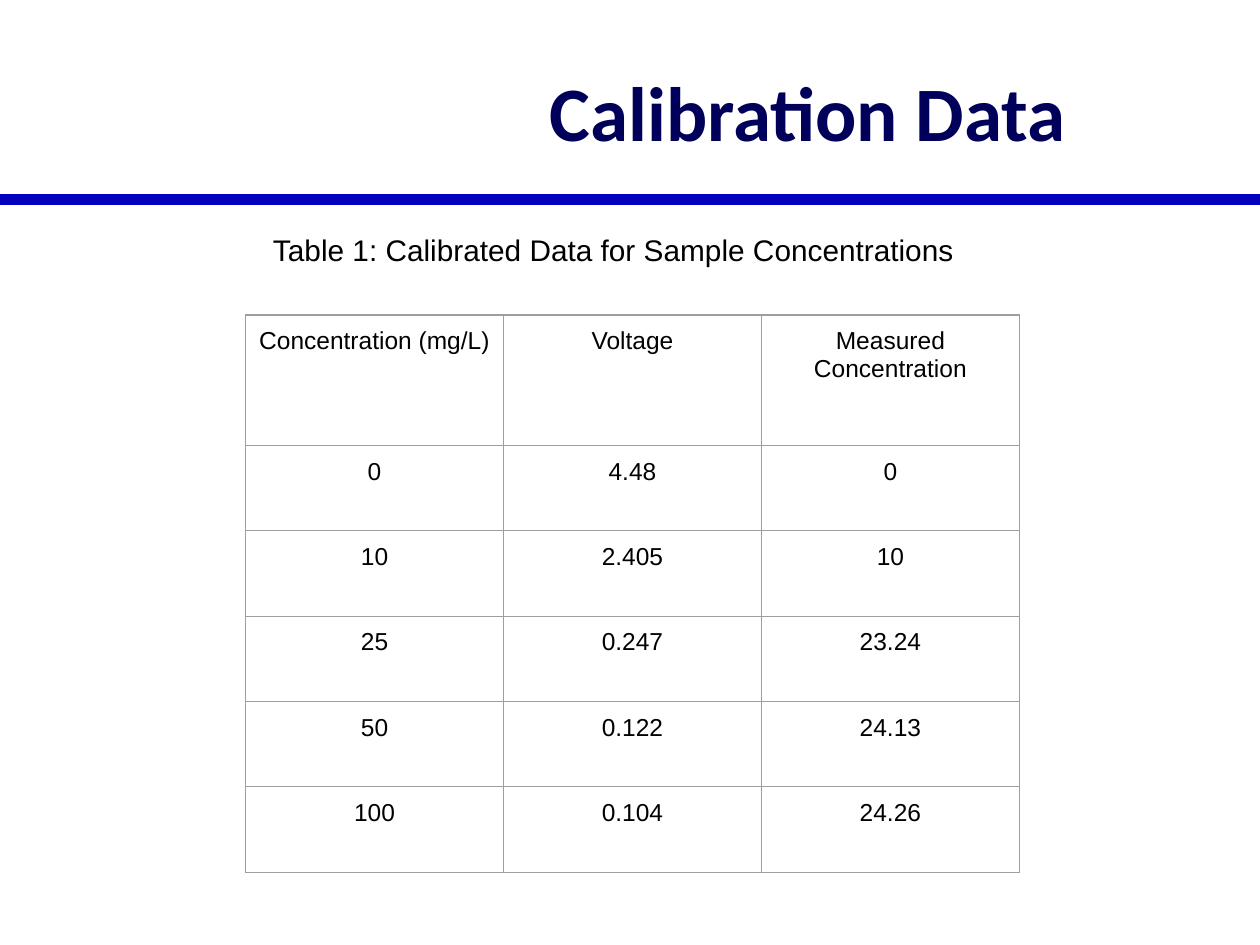
import pptx
import pptx.dml.color
import pptx.enum.shapes
import pptx.enum.text
import pptx.oxml
import pptx.oxml.ns
import pptx.util
from lxml import etree

Cm = pptx.util.Cm
Pt = pptx.util.Pt
Anchor = pptx.enum.text.MSO_ANCHOR

# Content
TITLE = "Calibration Data"
CAPTION = "Table 1: Calibrated Data for Sample Concentrations"
ROWS = [
    ("Concentration (mg/L)", "Voltage", "Measured Concentration"),
    ("0", "4.48", "0"),
    ("10", "2.405", "10"),
    ("25", "0.247", "23.24"),
    ("50", "0.122", "24.13"),
    ("100", "0.104", "24.26"),
]
COLORS = {"title": "00005A", "rule": "0300BE", "text": "000000", "border": "9E9E9E"}

# Layout in centimetres
SLIDE_WIDTH, SLIDE_HEIGHT = 25.4, 19.05
RULE_TOP = 4.02
TABLE_LEFT, TABLE_TOP = 4.95, 6.35
COLUMN_WIDTH = 5.2
HEADER_HEIGHT, ROW_HEIGHT = 2.63, 1.72
INSET = 0.25


def color(name):
    return pptx.dml.color.RGBColor.from_string(COLORS[name])


def write_text(text_frame, text, size, font="Arial", color_name="text", bold=False):
    text_frame.word_wrap = True
    paragraph = text_frame.paragraphs[0]
    paragraph.alignment = pptx.enum.text.PP_ALIGN.CENTER
    run = paragraph.add_run()
    run.text = text
    run.font.name = font
    run.font.size = Pt(size)
    run.font.bold = bold
    run.font.color.rgb = color(color_name)


def set_insets(target):
    target.margin_left = target.margin_right = Cm(INSET)
    target.margin_top = target.margin_bottom = Cm(INSET)


def add_text(slide, box, anchor, text, size, **style):
    text_frame = slide.shapes.add_textbox(*(Cm(length) for length in box)).text_frame
    set_insets(text_frame)
    text_frame.vertical_anchor = anchor
    write_text(text_frame, text, size, **style)


def add_borders(cell):
    properties = cell._tc.get_or_add_tcPr()
    for position, side in enumerate(("lnL", "lnR", "lnT", "lnB")):
        border = pptx.oxml.parse_xml(
            f'<a:{side} {pptx.oxml.ns.nsdecls("a")} w="{Pt(0.75)}"><a:solidFill>'
            f'<a:srgbClr val="{COLORS["border"]}"/></a:solidFill></a:{side}>'
        )
        properties.insert(position, border)


def add_rule(slide):
    rule = slide.shapes.add_connector(
        pptx.enum.shapes.MSO_CONNECTOR.STRAIGHT,
        Cm(0), Cm(RULE_TOP), Cm(SLIDE_WIDTH), Cm(RULE_TOP),
    )
    rule.line.color.rgb = color("rule")
    rule.line.width = Pt(6)
    etree.SubElement(rule._element.spPr, pptx.oxml.ns.qn("a:effectLst"))


def add_data_table(slide):
    row_heights = [HEADER_HEIGHT] + [ROW_HEIGHT] * (len(ROWS) - 1)
    column_count = len(ROWS[0])
    table = slide.shapes.add_table(
        len(ROWS), column_count, Cm(TABLE_LEFT), Cm(TABLE_TOP),
        Cm(COLUMN_WIDTH * column_count), Cm(sum(row_heights)),
    ).table
    table.first_row = table.horz_banding = False
    for column in table.columns:
        column.width = Cm(COLUMN_WIDTH)
    for row, height, values in zip(table.rows, row_heights, ROWS):
        row.height = Cm(height)
        for cell, value in zip(row.cells, values):
            cell.fill.background()
            set_insets(cell)
            add_borders(cell)
            write_text(cell.text_frame, value, 14)


def main():
    presentation = pptx.Presentation()
    presentation.slide_width = Cm(SLIDE_WIDTH)
    presentation.slide_height = Cm(SLIDE_HEIGHT)
    slide = presentation.slides.add_slide(presentation.slide_layouts[6])

    # Rule and title
    add_rule(slide)
    add_text(slide, (7.82, 0.64, 16.94, 3.18), Anchor.MIDDLE, TITLE, 44,
             font="Calibri", color_name="title", bold=True)

    # Table and its caption
    add_data_table(slide)
    add_text(slide, (5.18, 4.42, 14.38, 1.3), Anchor.TOP, CAPTION, 17)

    presentation.save("out.pptx")


if __name__ == "__main__":
    main()
